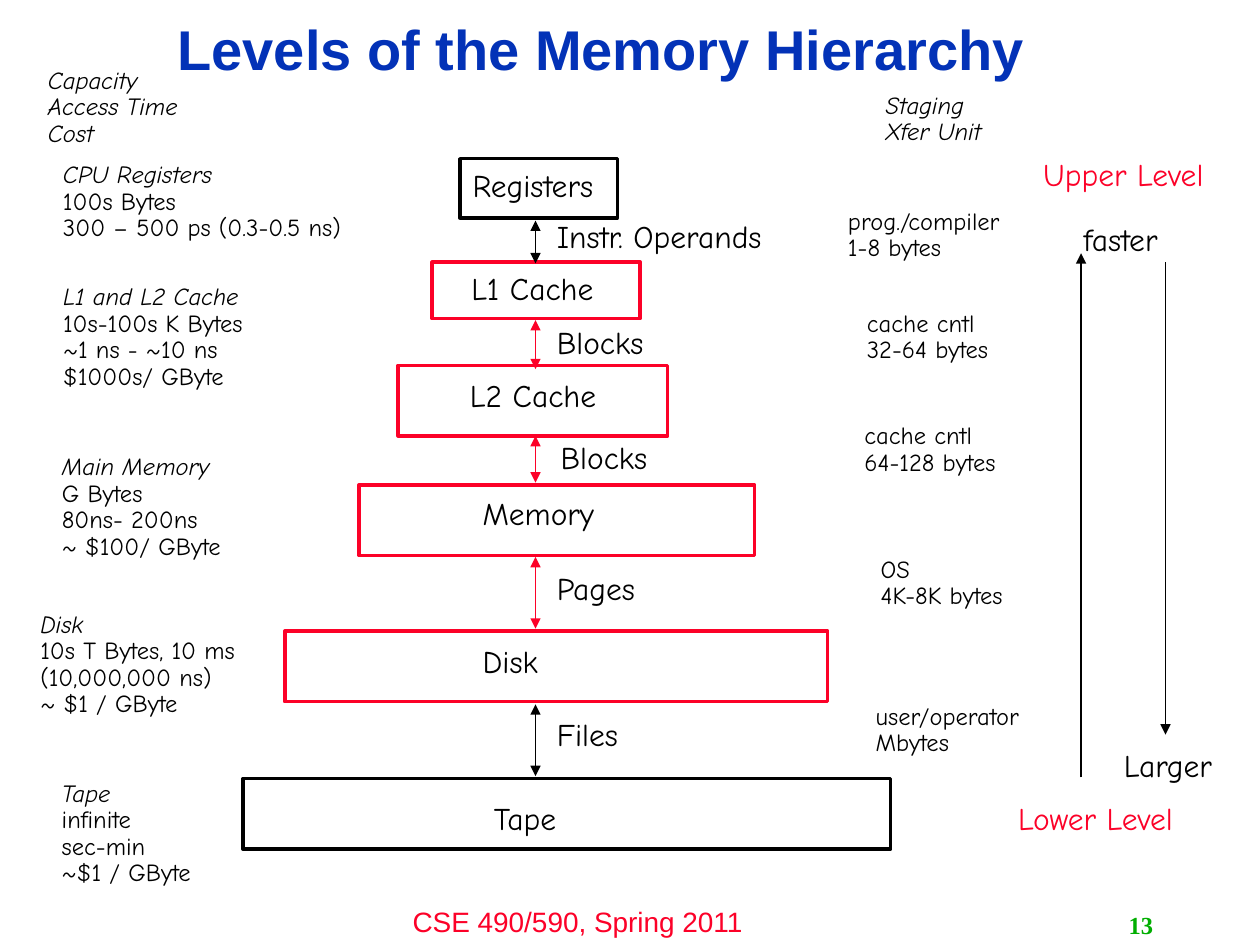
from lxml import etree
from pptx import Presentation
from pptx import util as u
from pptx.dml.color import RGBColor
from pptx.enum import shapes, text
from pptx.oxml import ns

BLACK = RGBColor(0x00, 0x00, 0x00)
RED = RGBColor(0xFC, 0x01, 0x28)
BLUE = RGBColor(0x03, 0x32, 0xB7)
GREEN = RGBColor(0x00, 0xAE, 0x00)

# Levels, top down: name, name left and top, box, colour
LEVELS = [
    ("Registers", 3.68, 1.33, (3.65, 1.26, 1.25, 0.47), BLACK),
    ("L1 Cache", 3.67, 2.15, (3.43, 2.08, 1.65, 0.45), RED),
    ("L2 Cache", 3.66, 3.0, (3.16, 2.9, 2.14, 0.56), RED),
    ("Memory", 3.76, 3.94, (2.85, 3.85, 3.14, 0.56), RED),
    ("Disk", 3.76, 5.11, (2.26, 5.01, 4.31, 0.56), RED),
    ("Tape", 3.85, 6.36, (1.93, 6.18, 5.14, 0.56), BLACK),
]

# Transfers between levels: unit, label left and top, arrow top and end, colour
MOVES = [
    ("Instr. Operands", 4.35, 1.74, 1.75, 2.09, BLACK),
    ("Blocks", 4.35, 2.58, 2.54, 2.93, RED),
    ("Blocks", 4.38, 3.49, 3.46, 3.83, RED),
    ("Pages", 4.35, 4.53, 4.42, 4.99, RED),
    ("Files", 4.35, 5.69, 5.59, 6.16, BLACK),
]
AXIS = 4.25

# Small notes: left, top, width, italic lines, plain lines
NOTES = [
    (0.31, 0.51, 2.25, ["Capacity", "Access Time", "Cost"], []),
    (0.43, 1.26, 2.66, ["CPU Registers"],
     ["100s Bytes", "300 – 500 ps (0.3-0.5 ns)"]),
    (0.43, 2.23, 1.85, ["L1 and L2 Cache"],
     ["10s-100s K Bytes", "~1 ns - ~10 ns", "$1000s/ GByte"]),
    (0.42, 3.58, 1.58, ["Main Memory"],
     ["G Bytes", "80ns- 200ns", "~ $100/ GByte"]),
    (0.25, 4.83, 2.13, ["Disk"],
     ["10s T Bytes, 10 ms\v(10,000,000 ns)", "~ $1 / GByte"]),
    (0.42, 6.17, 1.34, ["Tape"], ["infinite", "sec-min", "~$1 / GByte"]),
    (6.96, 0.71, 1.06, ["Staging", "Xfer Unit"], []),
    (6.66, 1.63, 1.49, [], ["prog./compiler", "1-8 bytes"]),
    (6.81, 2.44, 1.33, [], ["cache cntl", "32-64 bytes"]),
    (6.79, 3.33, 1.45, [], ["cache cntl", "64-128 bytes"]),
    (6.92, 4.39, 1.33, [], ["OS", "4K-8K bytes"]),
    (6.88, 5.56, 1.44, [], ["user/operator", "Mbytes"]),
]

# Scale at the right: text, left, top, width, colour
SCALE = [
    ("Upper Level", 8.21, 1.25, 1.57, RED),
    ("faster", 8.53, 1.76, 0.89, BLACK),
    ("Larger", 8.85, 5.94, 0.91, BLACK),
    ("Lower Level", 8.01, 6.36, 1.56, RED),
]
TRENDS = [(8.58, 6.17, 2.01), (9.25, 2.08, 5.83)]

TIGHT = (0.07, 0.03)
LOOSE = (0.1, 0.05)

deck = Presentation()
deck.slide_width, deck.slide_height = u.Inches(10), u.Inches(7.5)
slide = deck.slides.add_slide(deck.slide_layouts[6])


def write(at, lines, size, color=BLACK, face="Comic Neue", bold=False,
          slant=0, gap=0.9, inset=TIGHT, wrap=False, grow=True,
          align=text.PP_ALIGN.LEFT, anchor=text.MSO_ANCHOR.TOP):
    """Add a text box; the first `slant` lines are italic."""
    frame = slide.shapes.add_textbox(*map(u.Inches, at)).text_frame
    side, edge = map(u.Inches, inset)
    fit = text.MSO_AUTO_SIZE
    form = dict(margin_left=side, margin_right=side, margin_top=edge,
                margin_bottom=edge, word_wrap=wrap, vertical_anchor=anchor,
                auto_size=fit.SHAPE_TO_FIT_TEXT if grow else fit.NONE)
    for key, value in form.items():
        setattr(frame, key, value)
    for i, line in enumerate(lines):
        para = frame.add_paragraph() if i else frame.paragraphs[0]
        para.text = line
        para.alignment, para.line_spacing = align, gap
        style = dict(name=face, size=u.Pt(size), bold=bold, italic=i < slant)
        for run in para.runs:
            for key, value in style.items():
                setattr(run.font, key, value)
            run.font.color.rgb = color


def label(word, left, top, width, color=BLACK):
    write((left, top, width, 0.31), [word], 18, color, gap=0.85)


def arrow(x, start, end, color=BLACK, ends=("tailEnd",)):
    """Add a vertical line with a triangle at each named end."""
    line = slide.shapes.add_connector(
        shapes.MSO_CONNECTOR.STRAIGHT, *map(u.Inches, (x, start, x, end)))
    line.line.color.rgb = color
    line.line.width = u.Pt(1)
    pen = line.line._get_or_add_ln()
    for end_tag in ends:
        etree.SubElement(pen, ns.qn("a:" + end_tag), type="triangle")
    etree.SubElement(line._element.spPr, ns.qn("a:effectLst"))


# Title, footer and page number
write((1.31, 0.19, 7.08, 0.45), ["Levels of the Memory Hierarchy"], 32, BLUE,
      "Arial", bold=True, inset=LOOSE, wrap=True, grow=False,
      anchor=text.MSO_ANCHOR.MIDDLE)
write((2.92, 7.13, 3.33, 0.37), ["CSE 490/590, Spring 2011"], 16, RED,
      "Arial", gap=1.0, inset=LOOSE, wrap=True, align=text.PP_ALIGN.CENTER)
write((7.17, 7.18, 2.08, 0.32), ["13"], 14, GREEN, "Times New Roman",
      bold=True, gap=1.0, inset=LOOSE, wrap=True, grow=False,
      align=text.PP_ALIGN.RIGHT, anchor=text.MSO_ANCHOR.MIDDLE)

# Pyramid of levels
for name, left, top, box, color in LEVELS:
    rect = slide.shapes.add_shape(shapes.MSO_SHAPE.RECTANGLE,
                                  *map(u.Inches, box))
    rect.shadow.inherit = False
    rect.fill.background()
    rect.line.color.rgb = color
    rect.line.width = u.Pt(2)
    label(name, left, top, 1.25)

# Transfers between levels
for unit, left, top, start, end, color in MOVES:
    arrow(AXIS, start, end, color, ("headEnd", "tailEnd"))
    label(unit, left, top, 2.02 if len(unit) > 8 else 0.88)

# Notes on both sides
for left, top, width, heads, rows in NOTES:
    lines = heads + rows
    high = 0.06 + 0.21 * (len(lines) + sum(s.count("\v") for s in lines))
    write((left, top, width, high), lines, 14, slant=len(heads))

# Speed and size scale
for item in SCALE:
    label(*item)
for trend in TRENDS:
    arrow(*trend)

deck.save("out.pptx")
